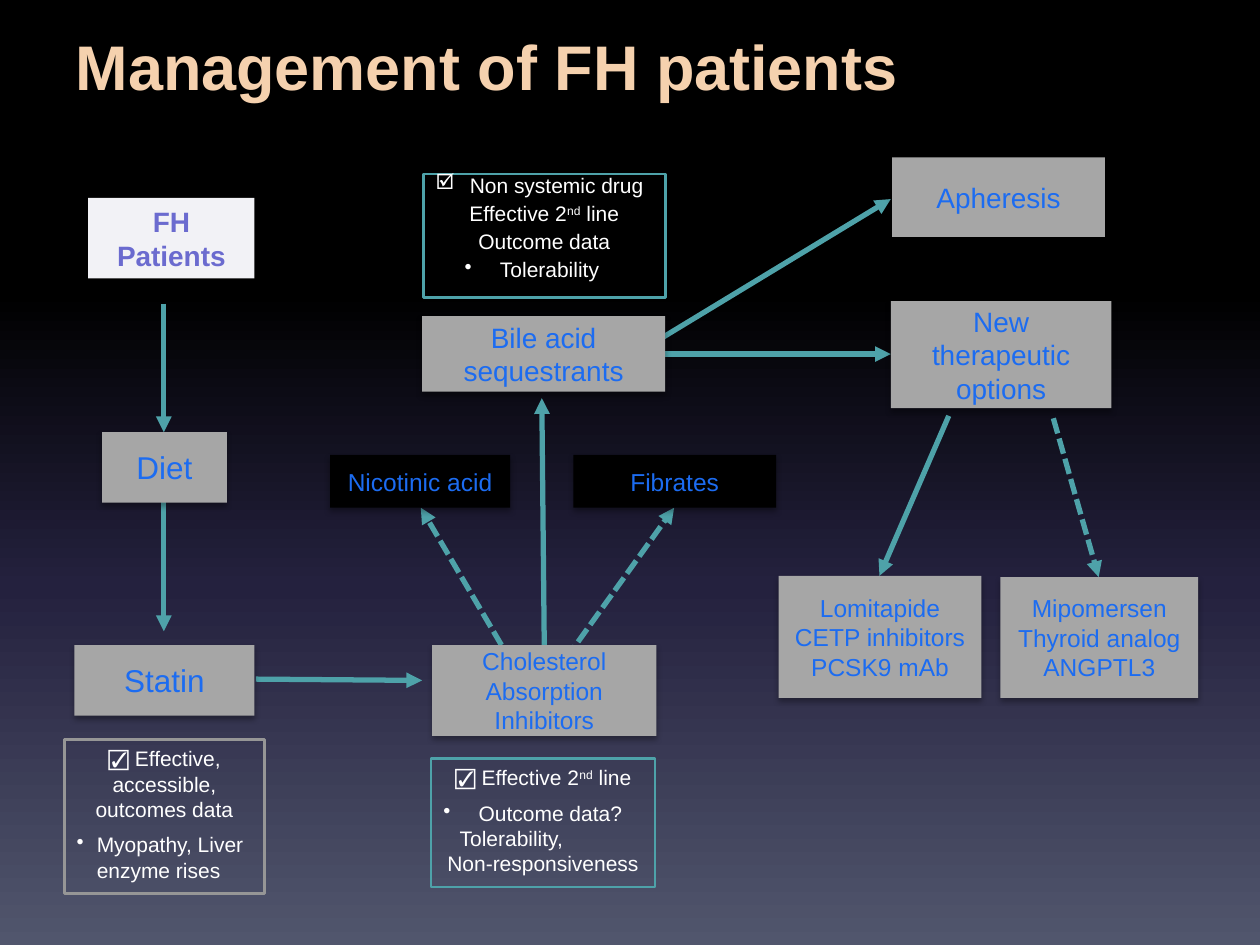
"""Build the slide on the management of FH patients."""
from dataclasses import dataclass
from typing import Any

from lxml import etree
from pptx import Presentation
from pptx.dml.color import RGBColor
from pptx.enum.dml import MSO_LINE
from pptx.enum.shapes import MSO_CONNECTOR, MSO_SHAPE
from pptx.enum.text import MSO_ANCHOR, PP_ALIGN
from pptx.oxml.ns import qn
from pptx.util import Inches, Pt

RECT, LINE, DASH = MSO_SHAPE.RECTANGLE, MSO_CONNECTOR.STRAIGHT, MSO_LINE.SQUARE_DOT
MID, TOP = MSO_ANCHOR.MIDDLE, MSO_ANCHOR.TOP
LEFT, MIDST = PP_ALIGN.LEFT, PP_ALIGN.CENTER
TEAL, GREY, BLUE, BLACK, WHITE = "4EA2A9", "A6A6A6", "1C6CF1", "000000", "FFFFFF"


@dataclass
class Box:
    """A filled step in the flow."""
    text: str
    at: tuple[float, float, float, float]
    size: int
    fill: str = GREY
    ink: str = BLUE
    bold: bool = False


@dataclass
class Link:
    """An arrow between two points."""
    start: tuple[float, float]
    end: tuple[float, float]
    dash: bool = False


@dataclass
class Item:
    """A paragraph of a note; text between bars is raised."""
    text: str
    mark: str = ""
    left: float = 0
    hang: float = 0
    gap: int = 6


@dataclass
class Note:
    """A framed comment under or over a step."""
    at: tuple[float, float, float, float]
    edge: str
    items: list[Item]
    lead: int | None = None


BOXES = [
    Box("FH Patients", (0.7, 1.57, 1.32, 0.64), 16, "F2F2F6", "6B6BCF", True),
    Box("Diet", (0.81, 3.43, 0.99, 0.56), 18),
    Box("Statin", (0.59, 5.12, 1.43, 0.56), 18),
    Box("Cholesterol\nAbsorption\nInhibitors", (3.43, 5.12, 1.78, 0.72), 14),
    Box("Nicotinic acid", (2.62, 3.61, 1.43, 0.42), 14, BLACK),
    Box("Fibrates", (4.55, 3.61, 1.61, 0.42), 14, BLACK),
    Box("Bile acid sequestrants", (3.35, 2.51, 1.93, 0.6), 16),
    Box("Apheresis", (7.08, 1.25, 1.69, 0.63), 16),
    Box("New therapeutic options", (7.07, 2.39, 1.75, 0.85), 16),
    Box("Lomitapide\nCETP inhibitors\nPCSK9 mAb", (6.18, 4.57, 1.61, 0.97), 14),
    Box("Mipomersen\nThyroid analog\nANGPTL3", (7.94, 4.58, 1.57, 0.96), 14),
]
LINKS = [
    Link((1.3, 2.41), (1.3, 3.43)),
    Link((1.3, 3.96), (1.3, 5.01)),
    Link((2.03, 5.39), (3.35, 5.4)),
    Link((3.98, 5.12), (3.34, 4.03), True),
    Link((4.32, 5.13), (4.3, 3.16)),
    Link((4.49, 5.23), (5.35, 4.03), True),
    Link((5.24, 2.69), (7.07, 1.58)),
    Link((5.28, 2.81), (7.07, 2.81)),
    Link((7.53, 3.3), (6.98, 4.57)),
    Link((8.36, 3.32), (8.72, 4.58), True),
]
NOTES = [
    Note((0.51, 5.87, 1.59, 1.22), "969696", [
        Item("☑ Effective, accessible, outcomes data"),
        Item("Myopathy, Liver enzyme rises", "•", 0.16, 0.16)]),
    Note((3.42, 6.02, 1.78, 1.02), TEAL, [
        Item("☑ Effective 2|nd| line"),
        Item("Outcome data?", "•", 0.28, 0.28),
        Item("Tolerability,", left=0.13, gap=0),
        Item("Non-responsiveness", gap=0)]),
    Note((3.36, 1.38, 1.92, 0.98), TEAL, [
        Item("Non systemic drug", "☑", 0.27, 0.27),
        Item("Effective 2|nd| line"),
        Item("Outcome data"),
        Item("Tolerability", "•", 0.51, 0.28)], 10),
]
STOPS = [(0, BLACK), (31, BLACK), (62, "24213E"), (100, "51566D")]


def hue(code: str) -> RGBColor:
    """Turn a hex string into a colour."""
    return RGBColor.from_string(code)


def put(target: Any, form: dict[str, Any]) -> None:
    """Set each format value on the target."""
    for name, value in form.items():
        setattr(target, name, value)


def sub(root: Any, tag: str, **attrs: Any) -> Any:
    """Add a child element with attributes."""
    return etree.SubElement(root, qn(tag), {key: str(val) for key, val in attrs.items()})


def ink(font: Any, size: int, code: str, bold: bool = False) -> None:
    """Style a font."""
    put(font, {"name": "Arial", "size": Pt(size), "bold": bold})
    font.color.rgb = hue(code)


def paint(slide: Any) -> None:
    """Fill the background from black down to slate."""
    fill = slide.background.fill
    fill.gradient()
    fill.gradient_angle = 270
    stops = slide.element.xpath(".//p:bg//a:gsLst")[0]
    stops.clear()
    for pos, code in STOPS:
        sub(sub(stops, "a:gs", pos=pos * 1000), "a:srgbClr", val=code)


def head(slide: Any, text: str) -> None:
    """Place the title."""
    title = slide.shapes.title
    put(title, dict(zip(("left", "top", "width", "height"), map(Inches, (0.5, 0.14, 9, 0.75)))))
    title.text_frame.vertical_anchor = MID
    para = title.text_frame.paragraphs[0]
    para.text, para.alignment = text, LEFT
    ink(para.runs[0].font, 36, "F5D1AE", True)


def link(slide: Any, arrow: Link) -> None:
    """Draw an arrow."""
    ends = map(Inches, arrow.start + arrow.end)
    wire = slide.shapes.add_connector(LINE, *ends)
    wire.line.color.rgb = hue(TEAL)
    wire.line.width = Pt(3)
    if arrow.dash:
        wire.line.dash_style = DASH
    part = wire.element.spPr
    sub(part.find(qn("a:ln")), "a:tailEnd", type="triangle")
    sub(part, "a:effectLst")


def rect(slide: Any, at: tuple[float, float, float, float], anchor: Any) -> Any:
    """Add a plain rectangle that wraps its text."""
    shape = slide.shapes.add_shape(RECT, *map(Inches, at))
    shape.shadow.inherit = False
    put(shape.text_frame, {"word_wrap": True, "vertical_anchor": anchor})
    return shape


def step(slide: Any, box: Box) -> None:
    """Draw a step with its shadow."""
    shape = rect(slide, box.at, MID)
    shape.fill.solid()
    shape.fill.fore_color.rgb = hue(box.fill)
    shape.line.fill.background()
    cast = sub(shape.element.spPr.find(qn("a:effectLst")), "a:outerShdw",
               blurRad=Pt(3.5), dist=Pt(2.2), dir=5400000, rotWithShape=0)
    sub(sub(cast, "a:srgbClr", val=BLACK), "a:alpha", val=32000)
    shape.text_frame.text = box.text
    for para in shape.text_frame.paragraphs:
        para.alignment = MIDST
        ink(para.runs[0].font, box.size, box.ink, box.bold)


def note(slide: Any, memo: Note) -> None:
    """Draw a framed note with its list."""
    shape = rect(slide, memo.at, TOP)
    shape.fill.background()
    shape.line.color.rgb = hue(memo.edge)
    shape.line.width = Pt(1.5)
    frame = shape.text_frame
    for num, item in enumerate(memo.items):
        para = frame.add_paragraph() if num else frame.paragraphs[0]
        put(para, {"alignment": LEFT if item.left else MIDST, "space_before": Pt(item.gap),
                   "line_spacing": Pt(memo.lead) if memo.lead else None})
        props = para._p.get_or_add_pPr()
        props.set("marL", str(Inches(item.left)))
        props.set("indent", str(-Inches(item.hang)))
        if item.mark:
            sub(props, "a:buChar", char=item.mark)
        for turn, text in enumerate(item.text.split("|")):
            run = para.add_run()
            run.text = text
            ink(run.font, 12, WHITE)
            if turn % 2:
                run.font._rPr.set("baseline", "30000")


def main() -> None:
    """Build and save the slide."""
    deck = Presentation()
    put(deck, {"slide_width": Inches(10), "slide_height": Inches(7.5)})
    slide = deck.slides.add_slide(deck.slide_layouts.get_by_name("Title Only"))
    paint(slide)
    head(slide, "Management of FH patients")
    for draw, parts in ((link, LINKS), (step, BOXES), (note, NOTES)):
        for part in parts:
            draw(slide, part)
    deck.save("out.pptx")


if __name__ == "__main__":
    main()
